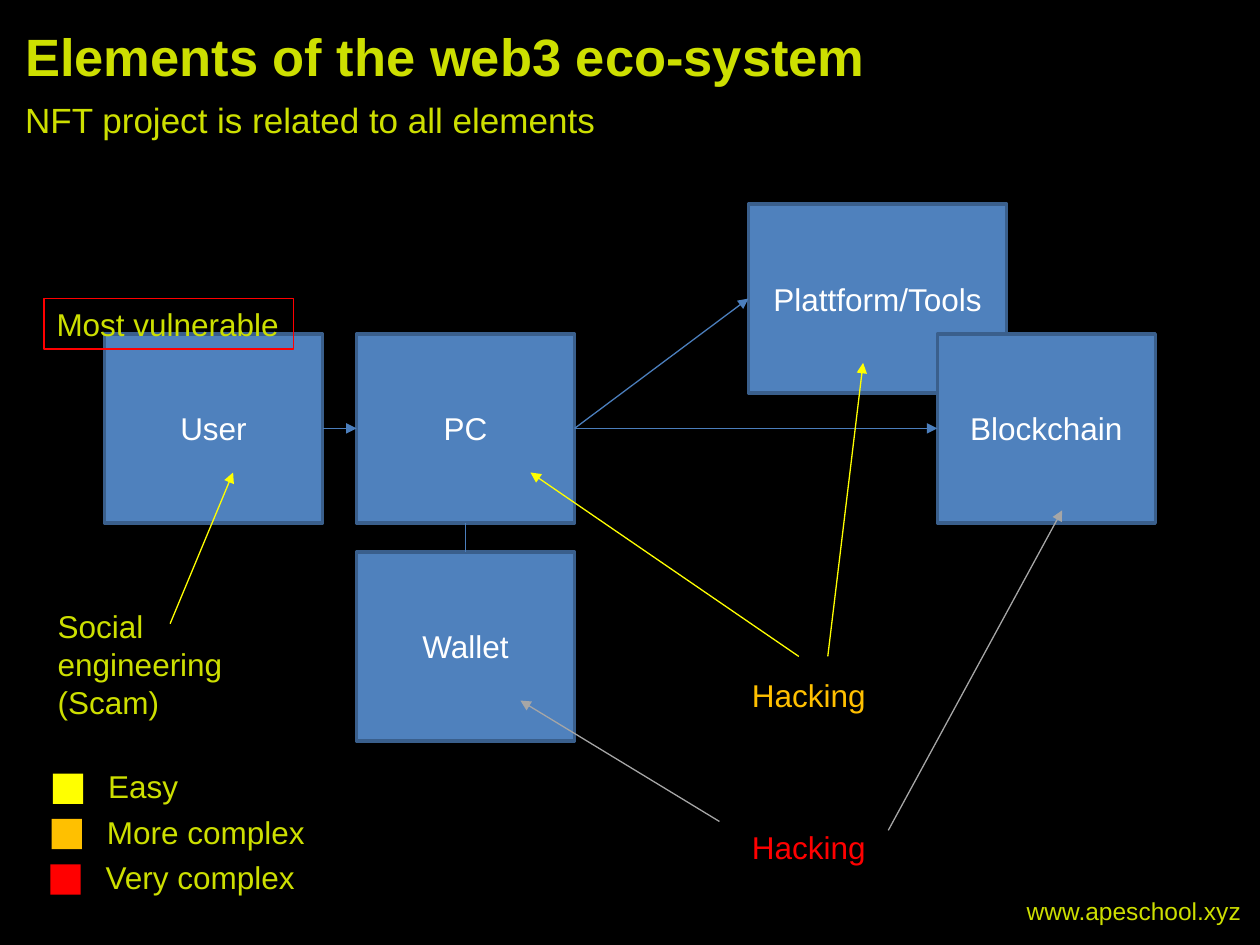
from lxml.etree import SubElement
from pptx import Presentation
from pptx.dml.color import RGBColor
from pptx.enum.shapes import MSO_CONNECTOR, MSO_SHAPE
from pptx.enum.text import MSO_ANCHOR, PP_ALIGN
from pptx.oxml.ns import qn
from pptx.util import Inches, Pt

COLORS = {name: RGBColor.from_string(value) for name, value in {
    "background": "000000", "lime": "CDDF00", "white": "FFFFFF",
    "box": "4F81BD", "border": "3A5F8C", "flow": "4B7EBC",
    "yellow": "FFFF00", "orange": "FFC000", "red": "FF0000", "gray": "A6A6A6",
}.items()}
TOP, LEFT, BOTTOM, RIGHT = range(4)

presentation = Presentation()
presentation.slide_width, presentation.slide_height = Inches(10), Inches(7.5)
slide = presentation.slides.add_slide(presentation.slide_layouts[5])
slide.background.fill.solid()
slide.background.fill.fore_color.rgb = COLORS["background"]
shapes = slide.shapes


def grid(*cells):
    """Turn counts of grid cells (100 columns by 75 rows) into lengths."""
    return [round(cell * presentation.slide_width / 100) for cell in cells]


def write(shape, text, color="lime", size=18, bold=False, frame_format=None,
          alignment=PP_ALIGN.LEFT):
    frame = shape.text_frame
    frame_values = {"word_wrap": True, "vertical_anchor": MSO_ANCHOR.TOP}
    for name, value in (frame_values | (frame_format or {})).items():
        setattr(frame, name, value)
    frame.text = text
    paragraph = frame.paragraphs[0]
    paragraph.alignment = alignment
    paragraph.space_before = Pt(0)
    font_values = {"name": "Arial", "size": Pt(size), "bold": bold}
    for name, value in font_values.items():
        setattr(paragraph.font, name, value)
    paragraph.font.color.rgb = COLORS[color]


# Headings and web address
no_margins = dict.fromkeys(
    ("margin_left", "margin_top", "margin_right", "margin_bottom"), 0)
title = shapes.title
title.left, title.top, title.width, title.height = grid(2, 2.1, 98, 4.6)
write(title, "Elements of the web3 eco-system", size=30, bold=True,
      frame_format=no_margins | {"vertical_anchor": MSO_ANCHOR.MIDDLE})
write(shapes.add_textbox(*grid(2, 7.8, 98, 4.5)),
      "NFT project is related to all elements", size=20,
      frame_format=no_margins)
write(shapes.add_textbox(*grid(80.5, 70.6, 19.1, 3.4)), "www.apeschool.xyz",
      size=14, frame_format={"word_wrap": False})

# Elements of the system
boxes = {}
for name, left, top, width in [
    ("User", 8.3, 26.5, 17.3),
    ("PC", 28.3, 26.5, 17.3),
    ("Plattform/Tools", 59.4, 16.2, 20.5),
    ("Blockchain", 74.4, 26.5, 17.3),
    ("Wallet", 28.3, 43.8, 17.3),
]:
    box = shapes.add_shape(MSO_SHAPE.RECTANGLE, *grid(left, top, width, 15))
    box.shadow.inherit = False
    box.fill.solid()
    box.fill.fore_color.rgb = COLORS["box"]
    box.line.color.rgb = COLORS["border"]
    box.line.width = Pt(2)
    write(box, name, "white", alignment=PP_ALIGN.CENTER,
          frame_format={"vertical_anchor": MSO_ANCHOR.MIDDLE})
    boxes[name] = box

# Links between elements, then attacks on them
connectors = []
for start, start_side, end, end_side, arrow in [
    ("User", RIGHT, "PC", LEFT, True),
    ("PC", BOTTOM, "Wallet", TOP, False),
    ("PC", RIGHT, "Plattform/Tools", LEFT, True),
    ("PC", RIGHT, "Blockchain", LEFT, True),
]:
    connector = shapes.add_connector(MSO_CONNECTOR.STRAIGHT, 0, 0, 0, 0)
    connector.begin_connect(boxes[start], start_side)
    connector.end_connect(boxes[end], end_side)
    connectors.append((connector, "flow", arrow))

for color, ends in [
    ("yellow", (13.5, 49.5, 18.5, 37.5)),
    ("yellow", (63.4, 52.1, 42.1, 37.5)),
    ("yellow", (65.7, 52.1, 68.5, 28.8)),
    ("gray", (57.1, 65.2, 41.3, 55.6)),
    ("gray", (70.5, 65.9, 84.3, 40.5)),
]:
    connector = shapes.add_connector(MSO_CONNECTOR.STRAIGHT, *grid(*ends))
    connectors.append((connector, color, True))

for connector, color, arrow in connectors:
    connector.line.color.rgb = COLORS[color]
    connector.line.width = Pt(0.75)
    if arrow:
        SubElement(connector.line._get_or_add_ln(), qn("a:tailEnd"),
                   type="triangle")
    SubElement(connector._element.spPr, qn("a:effectLst"))

# Attack labels
for text, color, place in [
    ("Social engineering (Scam)", "lime", (3.6, 47.7, 15.7, 10.1)),
    ("Hacking", "orange", (58.7, 53.2, 12.6, 4)),
    ("Hacking", "red", (58.7, 65.2, 12.6, 4)),
]:
    write(shapes.add_textbox(*grid(*place)), text, color)

warning = shapes.add_textbox(*grid(3.5, 23.7, 19.8, 4))
warning.line.color.rgb = COLORS["red"]
warning.line.width = Pt(0.75)
write(warning, "Most vulnerable", frame_format={"word_wrap": False})

# Legend: each row sits a little further left
for row, (text, color) in enumerate([
    ("Easy", "yellow"), ("More complex", "orange"), ("Very complex", "red"),
]):
    left, top = 4.2 - 0.1 * row, 61.4 + 3.6 * row
    swatch = shapes.add_shape(MSO_SHAPE.RECTANGLE, *grid(left, top, 2.4, 2.4))
    swatch.shadow.inherit = False
    swatch.fill.solid()
    swatch.fill.fore_color.rgb = COLORS[color]
    swatch.line.fill.background()
    write(shapes.add_textbox(*grid(left + 3.4, top - 1, 23.8, 4)), text)

presentation.save("out.pptx")
